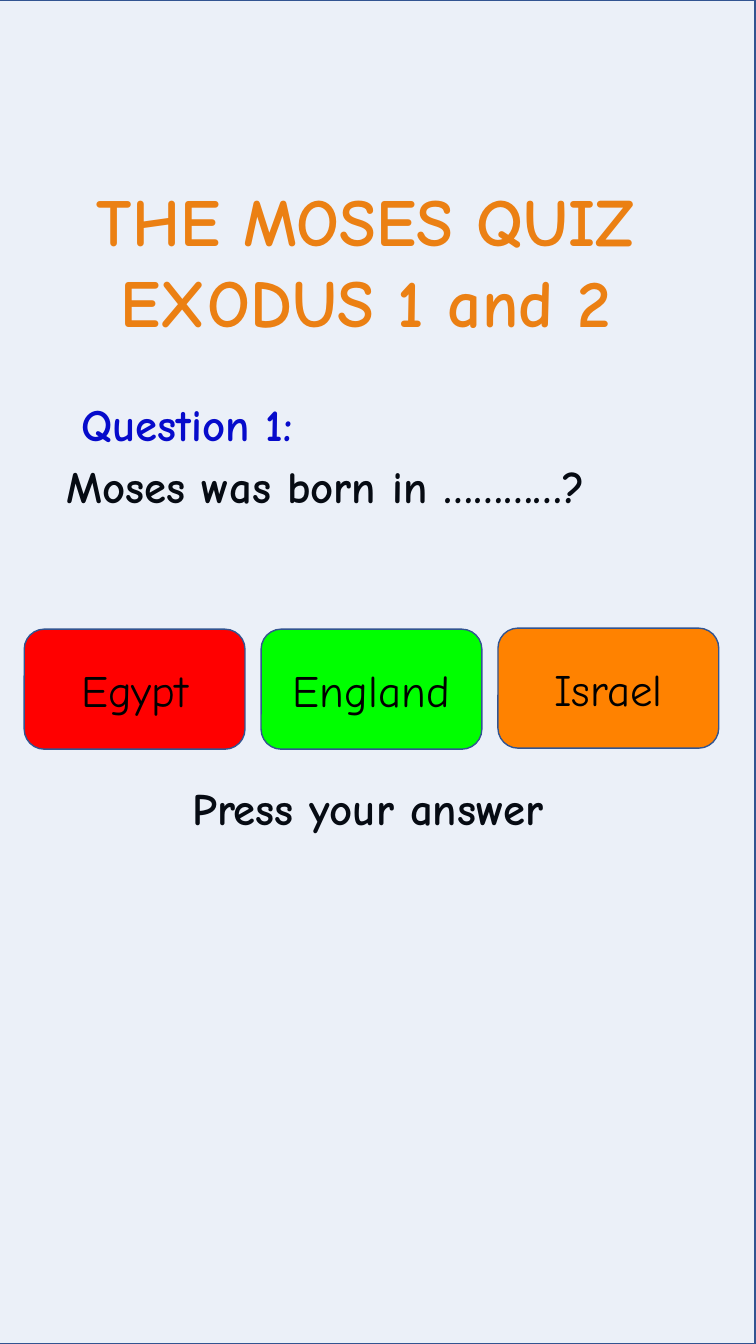
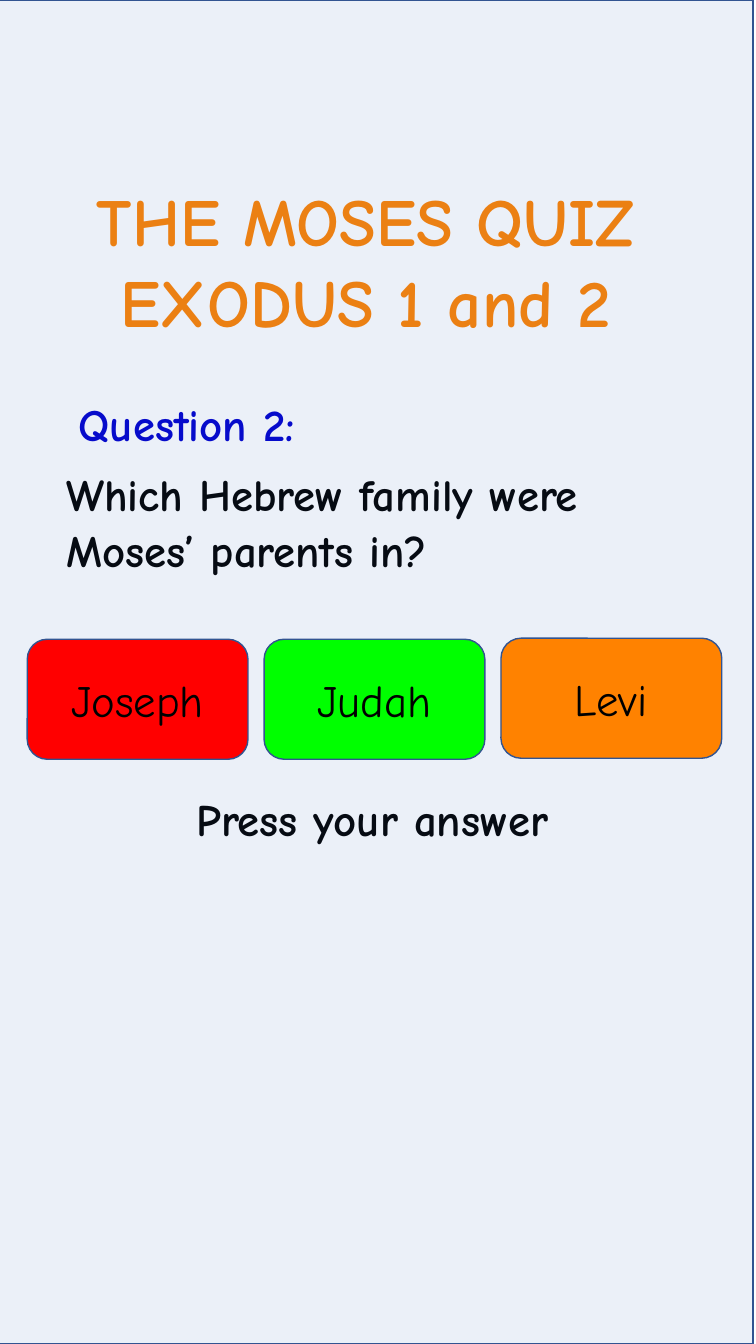
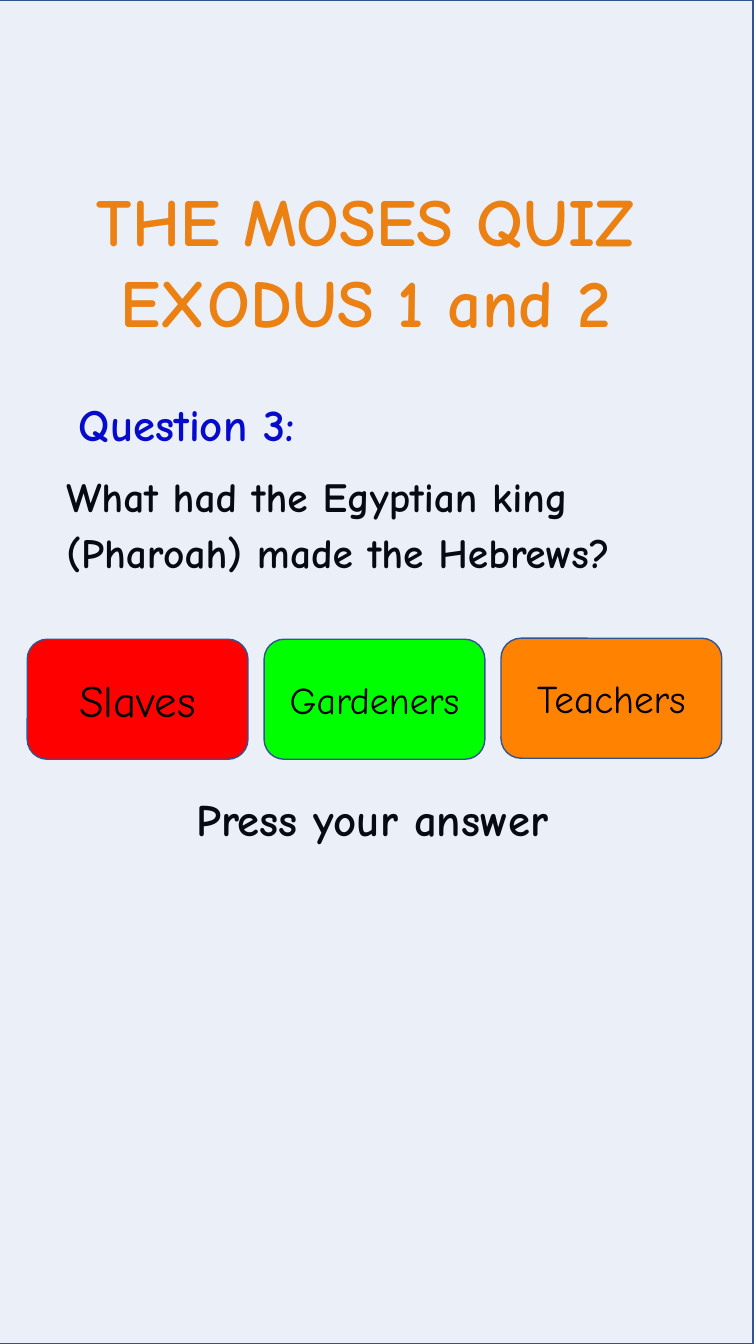
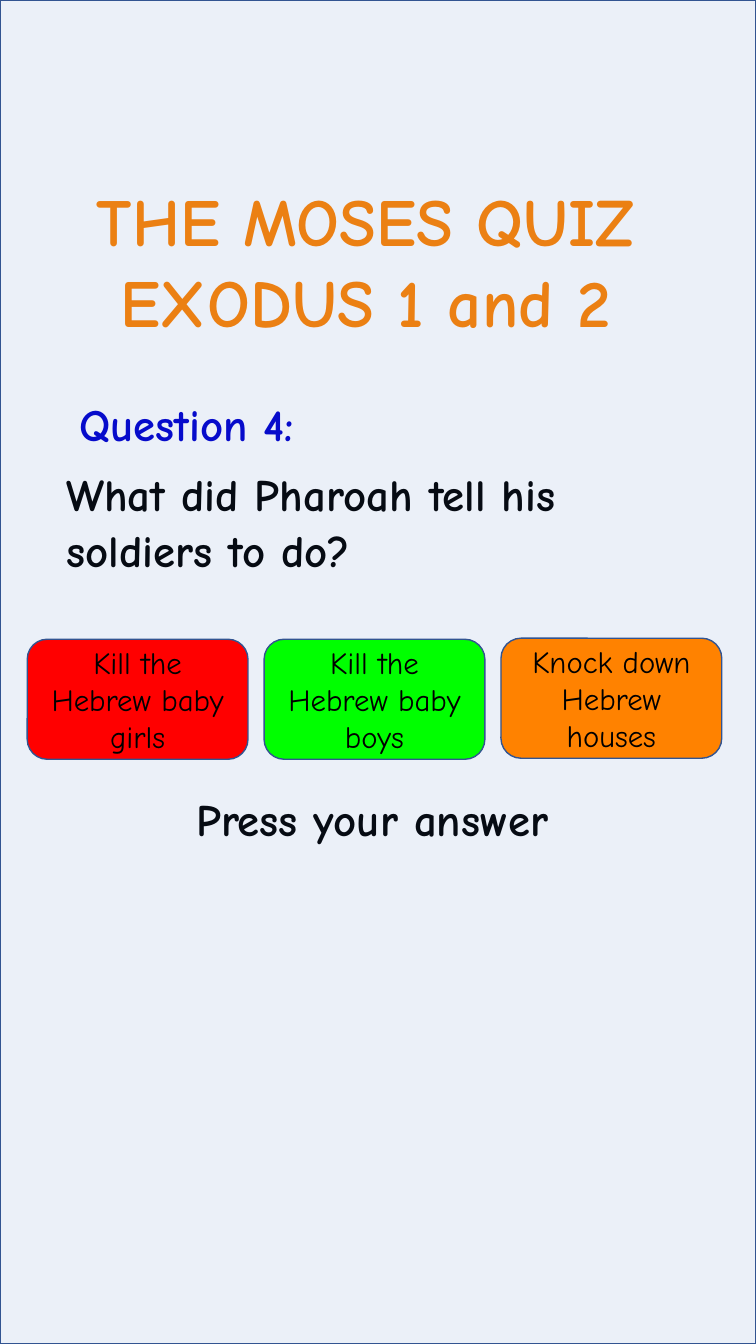
from dataclasses import dataclass

from lxml.etree import SubElement
from pptx import Presentation
from pptx.dml.color import RGBColor
from pptx.enum.shapes import MSO_SHAPE as Shape
from pptx.enum.text import MSO_ANCHOR as Anchor, MSO_AUTO_SIZE as AutoSize, PP_ALIGN as Align
from pptx.oxml.ns import qn
from pptx.util import Inches, Pt

BLACK = RGBColor(0x00, 0x00, 0x00)
RED = RGBColor(0xFF, 0x00, 0x00)
GREEN = RGBColor(0x00, 0xFF, 0x00)
ORANGE = RGBColor(0xFF, 0x82, 0x00)
QUESTION_BLUE = RGBColor(0x00, 0x00, 0xCC)
VEIL_BLUE = RGBColor(0x44, 0x72, 0xC4)
OUTLINE_BLUE = RGBColor(0x32, 0x54, 0x91)

FONT = "Comic Neue"
SLIDE_WIDTH, SLIDE_HEIGHT = 7.5, 13.33
BUTTON_WIDTH, BUTTON_HEIGHT, BUTTON_PITCH = 2.19, 1.19, 2.35
BUTTON_STYLES = [(RED, 0), (GREEN, 0), (ORANGE, 0.01)]
BUTTON_FRAME = {"word_wrap": True, "vertical_anchor": Anchor.MIDDLE,
                "margin_top": 0, "margin_bottom": 0}
TITLE_LINES = ["THE MOSES QUIZ ", "EXODUS 1 and 2 "]
BODY_FORMAT = {"line_spacing": 0.9, "space_before": Pt(7.5)}


@dataclass
class Question:
    text: str
    answers: list
    text_size: float = 32
    text_height: float = 1.46
    line_spacing: float = Pt(40)
    buttons_left: float = 0.27
    buttons_top: float = 6.34
    prompt_left: float = 1.85
    prompt_top: float = 7.86
    veil_left: float = -0.03


QUESTIONS = [
    Question("Moses was born in …………?",
             [("Egypt", 32), ("England", 32), ("Israel", 32)],
             text_height=0.72, line_spacing=0.9, buttons_left=0.24, buttons_top=6.24,
             prompt_left=1.81, prompt_top=7.75, veil_left=-0.01),
    Question("Which Hebrew family were Moses’ parents in?",
             [("Joseph", 32), ("Judah", 32), ("Levi", 32)]),
    Question("What had the Egyptian king (Pharoah) made the Hebrews?",
             [("Slaves", 32), ("Gardeners", 27), ("Teachers", 28)], text_size=29.6),
    Question("What did Pharoah tell his soldiers to do?",
             [("Kill the Hebrew baby girls", 22), ("Kill the Hebrew baby boys", 22),
              ("Knock down Hebrew houses", 22)], veil_left=0),
]


def set_values(target, values):
    for name, value in values.items():
        setattr(target, name, value)


def write_lines(text_frame, lines, size, colour, bold, paragraph_format):
    for index, line in enumerate(lines):
        paragraph = text_frame.add_paragraph() if index else text_frame.paragraphs[0]
        set_values(paragraph, paragraph_format)
        run = paragraph.add_run()
        run.text = line
        set_values(run.font, {"name": FONT, "size": Pt(size), "bold": bold})
        run.font.color.rgb = colour


def add_text(slide, box, lines, size, colour, paragraph_format, wrap=True):
    text_frame = slide.shapes.add_textbox(*map(Inches, box)).text_frame
    fit = AutoSize.NONE if wrap else AutoSize.SHAPE_TO_FIT_TEXT
    set_values(text_frame, {"word_wrap": wrap, "auto_size": fit})
    write_lines(text_frame, lines, size, colour, True, paragraph_format)


def add_panel(slide, kind, box, colour):
    shape = slide.shapes.add_shape(kind, *map(Inches, box))
    shape.shadow.inherit = False
    shape.fill.solid()
    shape.fill.fore_color.rgb = colour
    shape.line.color.rgb = OUTLINE_BLUE
    shape.line.width = Pt(1)
    return shape


def add_veil(slide, left):
    veil = add_panel(slide, Shape.RECTANGLE, (left, 0, SLIDE_WIDTH, SLIDE_HEIGHT), VEIL_BLUE)
    colour = veil.fill._xPr.find(qn("a:solidFill")).find(qn("a:srgbClr"))
    SubElement(colour, qn("a:alpha"), val="10000")


def add_answers(slide, question):
    for index, ((answer, size), (colour, rise)) in enumerate(zip(question.answers, BUTTON_STYLES)):
        left = question.buttons_left + index * BUTTON_PITCH
        top = question.buttons_top - rise
        button = add_panel(slide, Shape.ROUNDED_RECTANGLE,
                           (left, top, BUTTON_WIDTH, BUTTON_HEIGHT), colour)
        set_values(button.text_frame, BUTTON_FRAME)
        write_lines(button.text_frame, [answer], size, BLACK, False, {"alignment": Align.CENTER})


def add_question_slide(presentation, number, question):
    slide = presentation.slides.add_slide(presentation.slide_layouts[6])
    centred = {"alignment": Align.CENTER}
    add_text(slide, (0.3, 1.73, 6.89, 1.72), TITLE_LINES, 48, ORANGE, centred, wrap=False)
    add_text(slide, (0.47, 3.89, 2.77, 0.64), [f"Question {number}:"], 32, QUESTION_BLUE,
             centred, wrap=False)
    add_text(slide, (0.56, 4.56, 6.36, question.text_height), [question.text],
             question.text_size, BLACK, {**BODY_FORMAT, "line_spacing": question.line_spacing})
    add_text(slide, (question.prompt_left, question.prompt_top, 4.22, 0.72),
             ["Press your answer"], 32, BLACK, BODY_FORMAT)
    add_veil(slide, question.veil_left)
    add_answers(slide, question)


def main():
    presentation = Presentation()
    set_values(presentation, {"slide_width": Inches(SLIDE_WIDTH),
                              "slide_height": Inches(SLIDE_HEIGHT)})
    for number, question in enumerate(QUESTIONS, start=1):
        add_question_slide(presentation, number, question)
    presentation.save("out.pptx")


if __name__ == "__main__":
    main()
